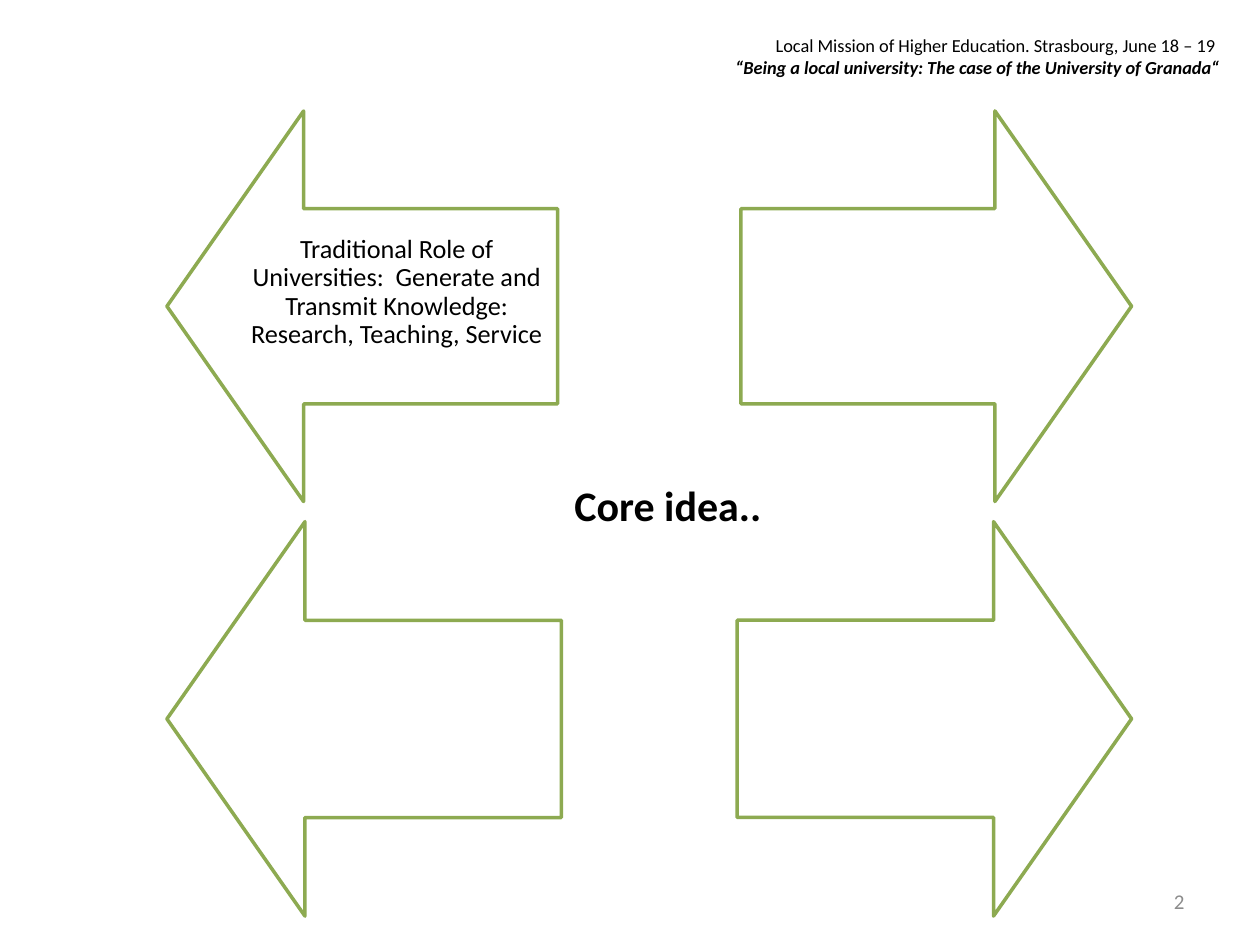
from pptx import Presentation
from pptx import util as u
from pptx.dml import color
from pptx.enum import shapes, text

COLOURS = {"white": "FFFFFF", "green": "8DAA51", "black": "000000", "grey": "8C8C8C"}

deck = Presentation()
deck.slide_width, deck.slide_height = u.Pt(720), u.Pt(540)
page = deck.slides.add_slide(deck.slide_layouts[6])


def rgb(name):
    return color.RGBColor.from_string(COLOURS[name])


def add_text(place, lines, size, align, anchor=text.MSO_ANCHOR.TOP, colour="black"):
    """Add a text box; each line is (wording, bold, italic)."""
    box = page.shapes.add_textbox(*[u.Pt(value) for value in place])
    frame = box.text_frame
    frame.word_wrap = True
    frame.vertical_anchor = anchor
    for index, (wording, bold, italic) in enumerate(lines):
        para = frame.paragraphs[0] if index == 0 else frame.add_paragraph()
        para.alignment = align
        span = para.add_run()
        span.text = wording
        span.font.name = "Calibri"
        span.font.size = u.Pt(size)
        span.font.bold = bold
        span.font.italic = italic
        span.font.color.rgb = rgb(colour)
    return frame


# Two rows of arrows, pointing outwards to shared left and right edges
left_edge, right_edge = 95.4, 646.6
for top, size in ((298.1, 225.4), (63.4, 223.2)):
    for left, rotation in ((left_edge, 270), (right_edge - size, 90)):
        arrow = page.shapes.add_shape(
            shapes.MSO_SHAPE.UP_ARROW, u.Pt(left), u.Pt(top), u.Pt(size), u.Pt(size))
        arrow.rotation = rotation
        arrow.adjustments[0], arrow.adjustments[1] = 0.5, 0.35
        arrow.shadow.inherit = False
        arrow.fill.solid()
        arrow.fill.fore_color.rgb = rgb("white")
        arrow.line.color.rgb = rgb("green")
        arrow.line.width = u.Pt(2)

# Header
add_text((33.8, 15.8, 670.3, 32.4),
         [("Local Mission of Higher Education. Strasbourg, June 18 – 19 ", False, False),
          ("“Being a local university: The case of the University of Granada“", True, True)],
         10.5, text.PP_ALIGN.RIGHT)

# Upper left arrow text, raised by a deeper bottom margin
role = add_text((134.6, 119.5, 184.3, 111.6),
                [("Traditional Role of Universities:  Generate and Transmit Knowledge: "
                  "Research, Teaching, Service", False, False)],
                15, text.PP_ALIGN.CENTER, text.MSO_ANCHOR.MIDDLE)
role.margin_left = role.margin_right = role.margin_top = u.Pt(8.6)
role.margin_bottom = u.Pt(25)
role.paragraphs[0].line_spacing = 0.9

# Centre title
add_text((257.8, 270.7, 247.7, 36), [("Core idea..", True, False)],
         24, text.PP_ALIGN.CENTER)

# Page number
add_text((516.2, 500.4, 167.8, 28.8), [("2", False, False)],
         12, text.PP_ALIGN.RIGHT, text.MSO_ANCHOR.MIDDLE, "grey")

deck.save("out.pptx")
